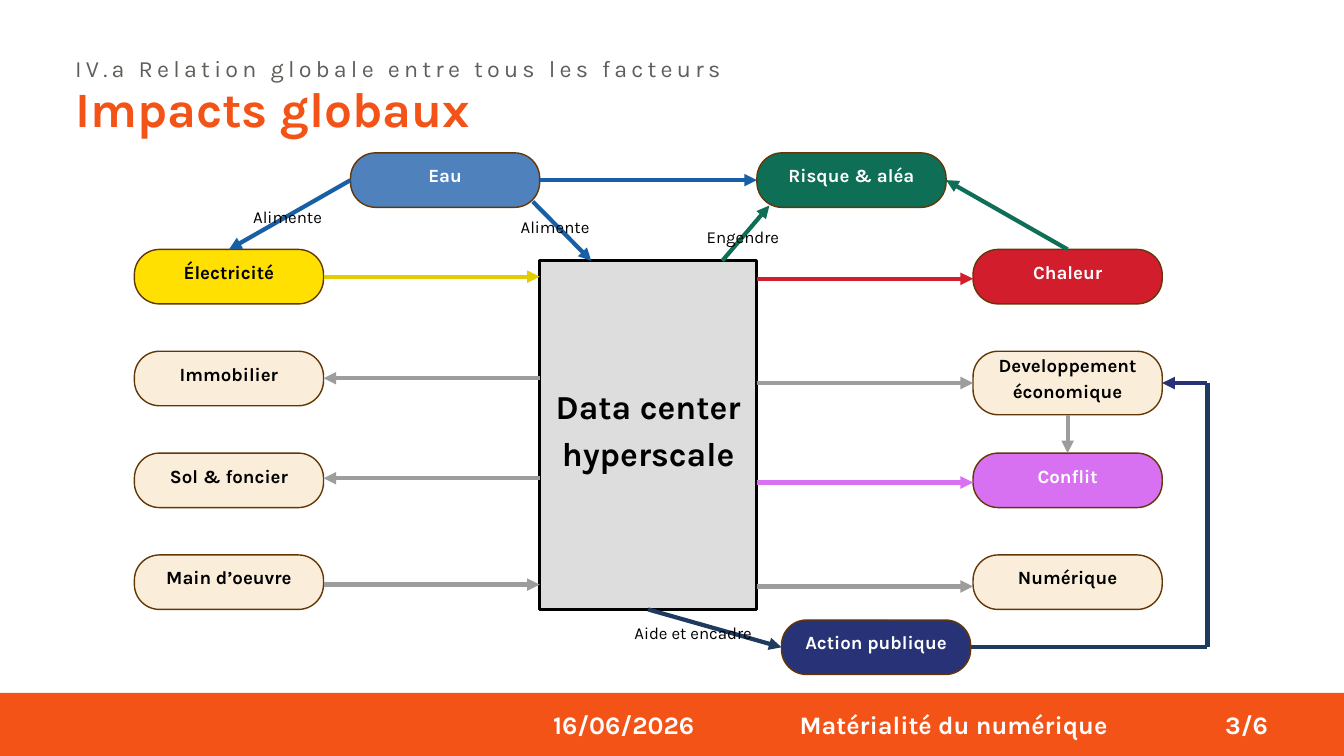
from lxml.etree import SubElement
from pptx import Presentation
from pptx.dml.color import RGBColor
from pptx.enum.shapes import MSO_CONNECTOR as Connector, MSO_SHAPE as Shape
from pptx.enum.text import MSO_ANCHOR as Anchor, MSO_AUTO_SIZE as AutoSize, PP_ALIGN as Align
from pptx.oxml.ns import qn
from pptx.util import Cm, Pt

COLORS = {
    "black": "000000", "white": "FFFFFF", "orange": "F45317", "text_grey": "5F5E5A",
    "box_grey": "DDDDDD", "cream": "FAEEDA", "brown": "633806", "yellow": "FFE000",
    "gold": "E3CD00", "red": "D21D2C", "violet": "D770F1", "navy": "273376",
    "dark_blue": "1F3A5F", "sky": "4F81BD", "blue": "185FA5", "green": "0F6E56",
    "grey": "9D9D9D",
}
NODE_WIDTH, NODE_HEIGHT, CORNER = 7.15, 2.06, 0.95
LEFT, RIGHT = 5.08, 36.78
ROWS = [9.43 + 3.85 * row for row in range(4)]
LEFT_EDGE, RIGHT_EDGE = LEFT + NODE_WIDTH, RIGHT + NODE_WIDTH
LEFT_MIDDLE, RIGHT_MIDDLE = LEFT + NODE_WIDTH / 2, RIGHT + NODE_WIDTH / 2
CENTER_LEFT, CENTER_TOP, CENTER_WIDTH, CENTER_HEIGHT = 20.4, 9.86, 8.2, 13.18
CENTER_RIGHT, CENTER_BOTTOM = CENTER_LEFT + CENTER_WIDTH, CENTER_TOP + CENTER_HEIGHT
WATER_X, RISK_X, TOP_Y = 13.25, 28.61, 5.78
ACTION_X, ACTION_Y = 29.54, 23.44
TOP_MIDDLE, ACTION_MIDDLE = TOP_Y + NODE_HEIGHT / 2, ACTION_Y + NODE_HEIGHT / 2
DEVELOPMENT_HEIGHT = 2.4
DEVELOPMENT_MIDDLE = ROWS[1] + DEVELOPMENT_HEIGHT / 2
LOOP_X = 45.64
FOOTER_Y = 26.19


def color(name):
    return RGBColor.from_string(COLORS[name])


class Diagram:
    font_name = "Karla"
    leading = 1.4
    arrow_width = 4.5

    def __init__(self, slide):
        self.slide = slide

    def set_text(self, shape, text, size, font_color, bold=False, align=Align.CENTER,
                 anchor=Anchor.TOP, insets=(0, 0, 0, 0)):
        """Fill a shape with one paragraph; insets run left, top, right, bottom."""
        frame = shape.text_frame
        frame.word_wrap = True
        frame.auto_size = AutoSize.NONE
        frame.vertical_anchor = anchor
        (frame.margin_left, frame.margin_top,
         frame.margin_right, frame.margin_bottom) = map(Cm, insets)
        frame.text = text
        paragraph = frame.paragraphs[0]
        paragraph.alignment = align
        paragraph.line_spacing = Pt(size * self.leading)
        paragraph.space_before = Pt(0)
        font = paragraph.font
        font.name, font.size, font.bold = self.font_name, Pt(size), bold
        font.color.rgb = color(font_color)
        return paragraph

    def heading(self, placeholder, box, text, size, font_color, bold=False, tracking=0):
        (placeholder.left, placeholder.top,
         placeholder.width, placeholder.height) = map(Cm, box)
        paragraph = self.set_text(placeholder, text, size, font_color, bold, Align.LEFT)
        if tracking:
            paragraph.runs[0]._r.get_or_add_rPr().set("spc", str(round(tracking * 100)))

    def label(self, x, y, width, height, text, size=18, font_color="black",
              bold=False, align=Align.CENTER):
        box = self.slide.shapes.add_textbox(Cm(x), Cm(y), Cm(width), Cm(height))
        self.set_text(box, text, size, font_color, bold, align)

    def block(self, kind, x, y, width, height, fill, line=None, line_width=1.5):
        shape = self.slide.shapes.add_shape(kind, Cm(x), Cm(y), Cm(width), Cm(height))
        shape.shadow.inherit = False
        shape.fill.solid()
        shape.fill.fore_color.rgb = color(fill)
        if line:
            shape.line.color.rgb = color(line)
            shape.line.width = Pt(line_width)
        else:
            shape.line.fill.background()
        return shape

    def node(self, x, y, text, fill="cream", font_color="black", height=NODE_HEIGHT):
        shape = self.block(Shape.ROUNDED_RECTANGLE, x, y, NODE_WIDTH, height, fill, "brown")
        shape.adjustments[0] = CORNER / height
        self.set_text(shape, text, 20, font_color, True,
                      anchor=Anchor.MIDDLE, insets=(0.15, 0, 0.15, 0.5))

    def arrow(self, start, end, line_color="grey", pointed=True):
        connector = self.slide.shapes.add_connector(
            Connector.STRAIGHT, *map(Cm, start), *map(Cm, end))
        connector.line.color.rgb = color(line_color)
        connector.line.width = Pt(self.arrow_width)
        if pointed:
            SubElement(connector.get_or_add_ln(), qn("a:tailEnd"), type="triangle")
        SubElement(connector._element.spPr, qn("a:effectLst"))


def main():
    presentation = Presentation()
    presentation.slide_width, presentation.slide_height = Cm(50.8), Cm(28.58)
    slide = presentation.slides.add_slide(presentation.slide_layouts[0])
    diagram = Diagram(slide)

    diagram.heading(slide.placeholders[1], (2.84, 1.88, 26.97, 1.17),
                    "IV.a Relation globale entre tous les facteurs", 25, "text_grey",
                    tracking=4.6)
    diagram.heading(slide.shapes.title, (2.84, 2.57, 15.01, 2.51),
                    "Impacts globaux", 53, "orange", bold=True)

    diagram.block(Shape.RECTANGLE, 0, FOOTER_Y, 50.8, 28.58 - FOOTER_Y, "orange")
    for x, width, text, align in (
        (20.7, 5.74, "16/06/2026", Align.CENTER),
        (28.8, 14.48, "Matérialité du numérique", Align.CENTER),
        (44.91, 3.02, "3/6", Align.RIGHT),
    ):
        diagram.label(x, 26.64, width, 1.3, text, 27, "white", True, align)

    center = diagram.block(Shape.RECTANGLE, CENTER_LEFT, CENTER_TOP, CENTER_WIDTH,
                           CENTER_HEIGHT, "box_grey", "black", 3)
    diagram.set_text(center, "Data center hyperscale", 36, "black", True,
                     anchor=Anchor.MIDDLE, insets=(0.15, 0.15, 0.15, 0.86))

    diagram.node(LEFT, ROWS[0], "Électricité", "yellow")
    for y, text in zip(ROWS[1:], ("Immobilier", "Sol & foncier", "Main d’oeuvre")):
        diagram.node(LEFT, y, text)
    diagram.node(RIGHT, ROWS[0], "Chaleur", "red", "white")
    diagram.node(RIGHT, ROWS[1], "Developpement économique", height=DEVELOPMENT_HEIGHT)
    diagram.node(RIGHT, ROWS[2], "Conflit", "violet", "white")
    diagram.node(RIGHT, ROWS[3], "Numérique")
    diagram.node(ACTION_X, ACTION_Y, "Action publique", "navy", "white")
    diagram.node(WATER_X, TOP_Y, "Eau", "sky", "white")
    diagram.node(RISK_X, TOP_Y, "Risque & aléa", "green", "white")

    for y in (14.3, 18.08):
        diagram.arrow((CENTER_LEFT, y), (LEFT_EDGE, y))
    for y, line_color in ((10.46, "gold"), (22.1, "grey")):
        diagram.arrow((LEFT_EDGE, y), (CENTER_LEFT, y), line_color)
    for y, line_color in ((10.54, "red"), (DEVELOPMENT_MIDDLE, "grey"),
                          (18.24, "violet"), (22.17, "grey")):
        diagram.arrow((CENTER_RIGHT, y), (RIGHT, y), line_color)

    diagram.arrow((20.14, 7.62), (22.35, CENTER_TOP), "blue")
    diagram.arrow((27.3, CENTER_TOP), (29.08, 7.77), "green")
    diagram.arrow((RIGHT_MIDDLE, ROWS[0]), (RISK_X + NODE_WIDTH, TOP_MIDDLE), "green")
    diagram.arrow((WATER_X, TOP_MIDDLE), (LEFT_MIDDLE, ROWS[0]), "blue")
    diagram.arrow((WATER_X + NODE_WIDTH, TOP_MIDDLE), (RISK_X, TOP_MIDDLE), "blue")
    diagram.arrow((CENTER_LEFT + CENTER_WIDTH / 2, CENTER_BOTTOM),
                  (ACTION_X, ACTION_MIDDLE), "dark_blue")
    diagram.arrow((RIGHT_MIDDLE, ROWS[1] + DEVELOPMENT_HEIGHT), (RIGHT_MIDDLE, ROWS[2]))

    corner = (LOOP_X, ACTION_MIDDLE)
    loop_top = (LOOP_X, DEVELOPMENT_MIDDLE)
    diagram.arrow((ACTION_X + NODE_WIDTH, ACTION_MIDDLE), corner, "dark_blue", False)
    diagram.arrow(corner, loop_top, "dark_blue", False)
    diagram.arrow(loop_top, (RIGHT_EDGE, DEVELOPMENT_MIDDLE), "navy")

    for x, y, width, text in (
        (9.5, 7.7, 2.74, "Alimente"),
        (19.61, 8.05, 2.74, "Alimente"),
        (26.62, 8.43, 2.92, "Engendre"),
        (23.8, 23.42, 4.8, "Aide et encadre"),
    ):
        diagram.label(x, y, width, 0.84, text)

    presentation.save("out.pptx")


if __name__ == "__main__":
    main()
